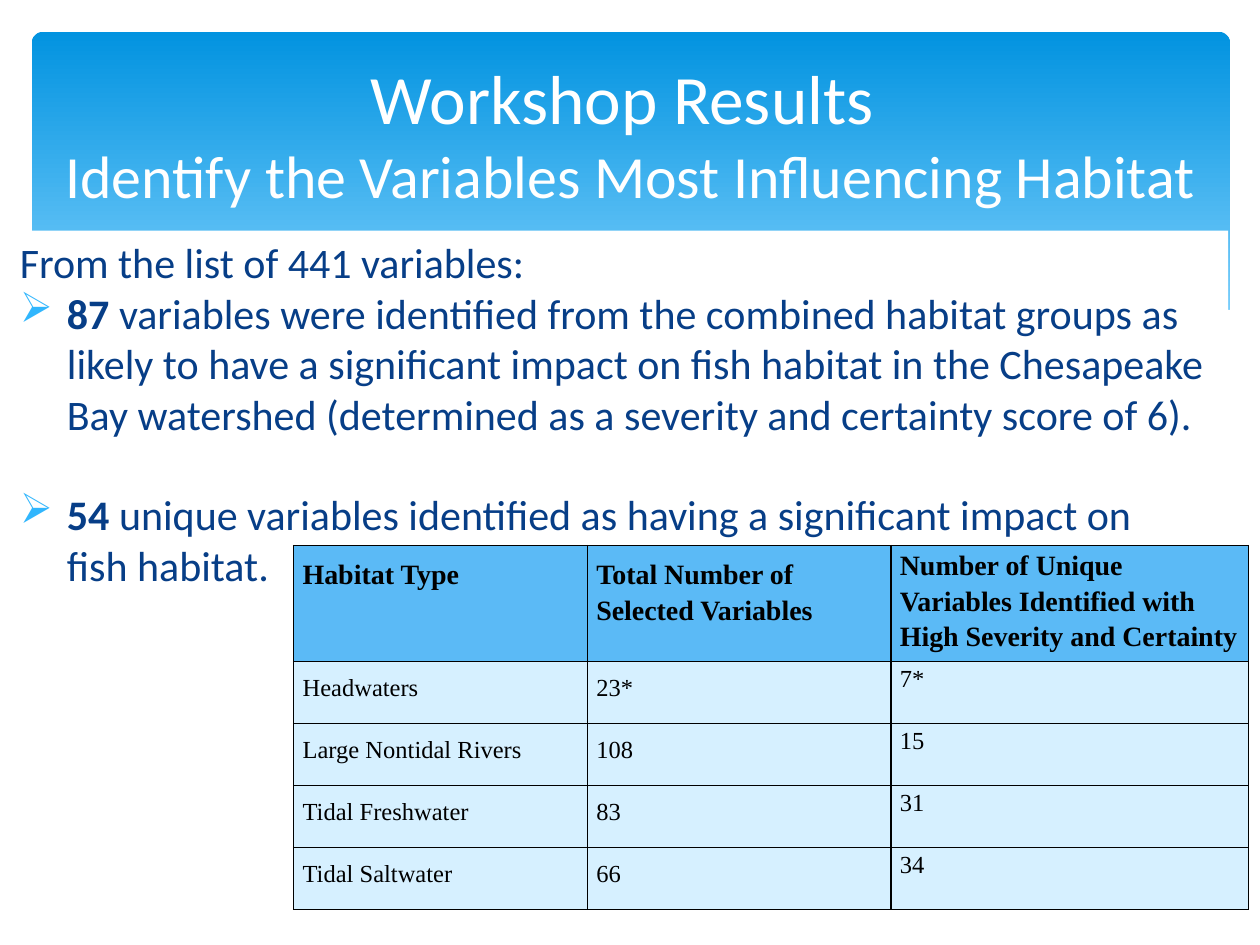
from dataclasses import dataclass

import pptx
import pptx.dml.color
import pptx.enum.shapes
import pptx.enum.text
import pptx.oxml
import pptx.oxml.ns
import pptx.util
from lxml import etree

Cm = pptx.util.Cm
Pt = pptx.util.Pt
Shape = pptx.enum.shapes.MSO_SHAPE
Anchor = pptx.enum.text.MSO_ANCHOR
Align = pptx.enum.text.PP_ALIGN
qn = pptx.oxml.ns.qn


@dataclass(frozen=True)
class Theme:
    white: str = "FFFFFF"
    black: str = "000000"
    banner_top: str = "0293E0"
    banner_bottom: str = "83D3FE"
    text: str = "073E87"
    bullet: str = "31B6FD"
    table_head: str = "5BBAF6"
    table_body: str = "D6F0FF"
    font: str = "Calibri"
    table_font: str = "Times New Roman"
    title: float = 39.6
    subtitle: float = 34.2
    body: float = 24
    head: float = 16
    cell: float = 14


THEME = Theme()

INTRO = [("From the list of 441 variables:", False)]
IDENTIFIED = [
    ("87 ", True),
    ("variables were identified from the combined habitat groups as likely to "
     "have a significant impact on fish habitat in the Chesapeake Bay watershed "
     "(determined as a severity and certainty score of 6).", False),
]
UNIQUE = [
    ("54 ", True),
    ("unique variables identified as having a significant impact on fish habitat.", False),
]
ROWS = [
    ("Habitat Type", "Total Number of Selected Variables",
     "Number of Unique Variables Identified with High Severity and Certainty"),
    ("Headwaters", "23*", "7*"),
    ("Large Nontidal Rivers", "108", "15"),
    ("Tidal Freshwater", "83", "31"),
    ("Tidal Saltwater", "66", "34"),
]
COL_WIDTHS = (5.92, 6.12, 7.21)
ROW_HEIGHTS = (2.26, 1.25, 1.25, 1.25, 1.25)


def rgb(value):
    return pptx.dml.color.RGBColor.from_string(value)


def lengths(box):
    return [Cm(v) for v in box]


def style_run(r, font, size, color, bold=False):
    r.font.name = font
    r.font.size = Pt(size)
    r.font.bold = bold
    r.font.color.rgb = rgb(color)


def add_block(slide, kind, box):
    sp = slide.shapes.add_shape(kind, *lengths(box))
    sp.shadow.inherit = False
    sp.line.fill.background()
    sp.fill.solid()
    sp.fill.fore_color.rgb = rgb(THEME.white)
    return sp


def add_banner(slide, box):
    left, top, width, height = box
    sp = add_block(slide, Shape.ROUNDED_RECTANGLE, box)
    sp.adjustments[0] = 0.034
    sp.fill.gradient()
    sp.fill.gradient_angle = 270
    stops = sp.fill.gradient_stops
    for stop, position, color in zip(
            stops, (0, 0.9), (THEME.banner_top, THEME.banner_bottom)):
        stop.position = position
        stop.color.rgb = rgb(color)
    add_block(slide, Shape.RECTANGLE, (left - 0.05, top + 5.61, width + 0.1, 2.11))


def add_title(slide, box):
    tf = slide.shapes.add_textbox(*lengths(box)).text_frame
    tf.word_wrap = True
    tf.vertical_anchor = Anchor.MIDDLE
    p = tf.paragraphs[0]
    p.text = "Workshop Results \vIdentify the Variables Most Influencing Habitat"
    p.alignment = Align.CENTER
    for r, size in zip(p.runs, (THEME.title, THEME.subtitle)):
        style_run(r, THEME.font, size, THEME.white)


def set_bullet(p):
    pPr = p._p.get_or_add_pPr()
    pPr.set("marL", str(Cm(0.95)))
    pPr.set("indent", str(-Cm(0.95)))
    color = etree.SubElement(pPr, qn("a:buClr"))
    etree.SubElement(color, qn("a:srgbClr"), val=THEME.bullet)
    etree.SubElement(pPr, qn("a:buChar"), char="➢")


def write_paragraph(p, parts, bulleted):
    p.alignment = Align.LEFT
    if bulleted:
        set_bullet(p)
    for text, bold in parts:
        r = p.add_run()
        r.text = text
        style_run(r, THEME.font, THEME.body, THEME.text, bold)


def add_findings(slide, box):
    tf = add_block(slide, Shape.RECTANGLE, box).text_frame
    tf.word_wrap = True
    tf.vertical_anchor = Anchor.TOP
    write_paragraph(tf.paragraphs[0], INTRO, False)
    write_paragraph(tf.add_paragraph(), IDENTIFIED, True)


def add_unique_finding(slide, box):
    tf = slide.shapes.add_textbox(*lengths(box)).text_frame
    tf.word_wrap = True
    write_paragraph(tf.paragraphs[0], UNIQUE, True)


def set_borders(cell):
    tcPr = cell._tc.get_or_add_tcPr()
    for i, side in enumerate(("lnL", "lnR", "lnT", "lnB")):
        ln = etree.Element(qn("a:" + side), w=str(Pt(1)))
        fill = etree.SubElement(ln, qn("a:solidFill"))
        etree.SubElement(fill, qn("a:srgbClr"), val=THEME.black)
        tcPr.insert(i, ln)


def fill_cell(cell, text, is_head, is_last):
    cell.margin_left = cell.margin_right = Cm(0.18)
    cell.margin_top = cell.margin_bottom = Cm(0 if is_last else 0.18)
    cell.fill.solid()
    cell.fill.fore_color.rgb = rgb(THEME.table_head if is_head else THEME.table_body)
    set_borders(cell)
    p = cell.text_frame.paragraphs[0]
    p.text = text
    p.line_spacing = 1.15
    size = THEME.head if is_head else THEME.cell
    style_run(p.runs[0], THEME.table_font, size, THEME.black, is_head)


def add_habitat_table(slide, box):
    table = slide.shapes.add_table(len(ROWS), len(COL_WIDTHS), *lengths(box)).table
    for column, width in zip(table.columns, COL_WIDTHS):
        column.width = Cm(width)
    for row, height in zip(table.rows, ROW_HEIGHTS):
        row.height = Cm(height)
    for i, values in enumerate(ROWS):
        for j, text in enumerate(values):
            fill_cell(table.cell(i, j), text, i == 0, j == len(values) - 1)


def main():
    prs = pptx.Presentation()
    prs.slide_width = Cm(25.4)
    prs.slide_height = Cm(19.05)
    slide = prs.slides.add_slide(prs.slide_layouts[6])
    add_banner(slide, (0.64, 0.64, 24.16, 6.86))
    add_findings(slide, (0.15, 4.65, 24.61, 5.38))
    add_title(slide, (0.64, 0.94, 24.13, 3.48))
    add_habitat_table(slide, (5.92, 11, sum(COL_WIDTHS), sum(ROW_HEIGHTS)))
    add_unique_finding(slide, (0.15, 9.73, 23.93, 2.31))
    prs.save("out.pptx")


if __name__ == "__main__":
    main()
